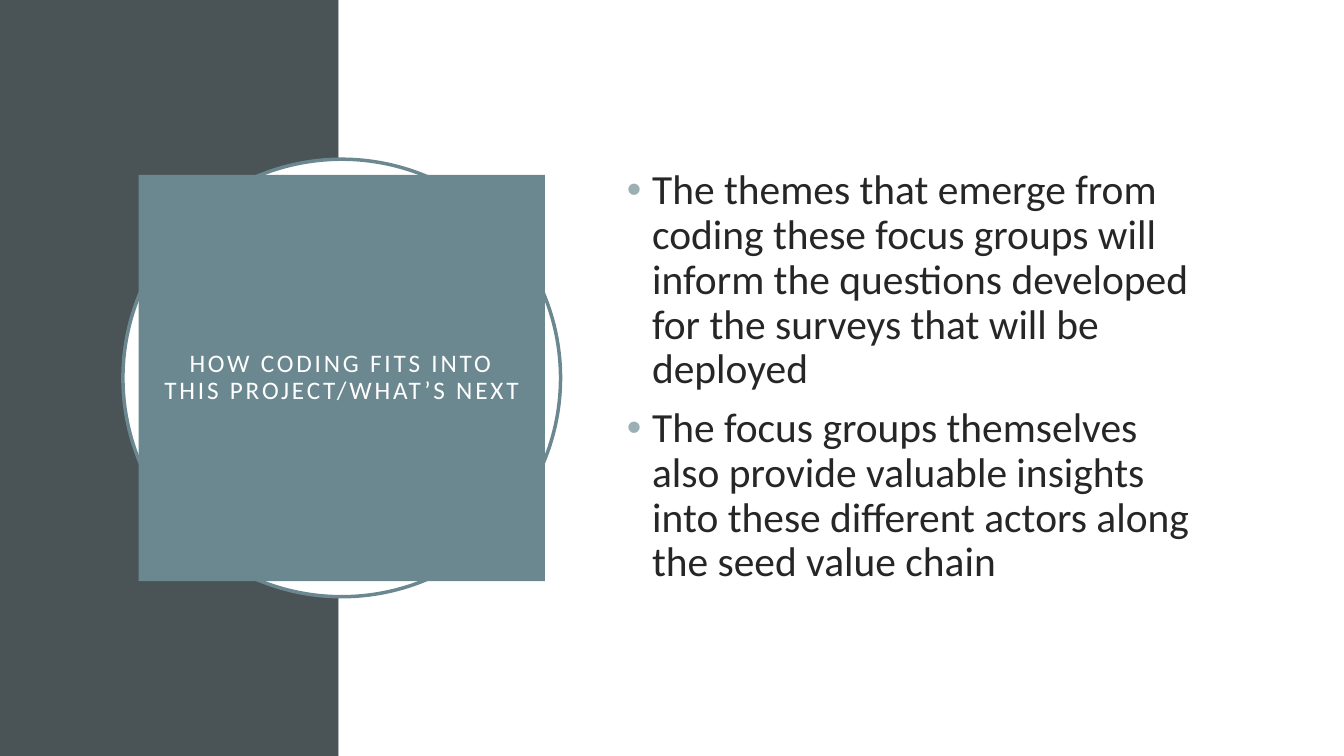
from dataclasses import dataclass

from lxml.etree import SubElement
from pptx import Presentation
from pptx.dml.color import RGBColor
from pptx.enum.shapes import MSO_SHAPE as Preset
from pptx.enum.text import MSO_ANCHOR as Anchor, PP_ALIGN as Align
from pptx.oxml.ns import qn
from pptx.util import Inches, Pt

WIDTH, HEIGHT = Inches(13.33), Inches(7.5)
SIDEBAR = 25.2
BADGE_CENTRE = 25.43
TITLE = "HOW CODING FITS INTO THIS PROJECT/WHAT’S NEXT"
POINTS = (
    "The themes that emerge from coding these focus groups will inform "
    "the questions developed for the surveys that will be deployed",
    "The focus groups themselves also provide valuable insights into "
    "these different actors along the seed value chain",
)


@dataclass(frozen=True)
class Theme:
    """Colours, font and type sizes of the slide."""
    dark: str = "4A5356"
    accent: str = "6B8891"
    bullet: str = "9BAFB5"
    ink: str = "262626"
    paper: str = "FFFFFF"
    font: str = "Calibri"
    title_size: float = 18
    body_size: float = 29.6


THEME = Theme()


def area(left, top, width, height):
    """Turn percentages of the slide into a left, top, width, height box."""
    return (int(WIDTH * left / 100), int(HEIGHT * top / 100),
            int(WIDTH * width / 100), int(HEIGHT * height / 100))


def centred_square(side):
    """Give a square around the badge centre, its side a percentage of the height."""
    width = side * HEIGHT / WIDTH
    return area(BADGE_CENTRE - width / 2, 50 - side / 2, width, side)


def add_block(slide, preset, box, fill, line=None):
    """Draw a flat preset shape with an optional outline colour."""
    shape = slide.shapes.add_shape(preset, *box)
    shape.shadow.inherit = False
    shape.fill.solid()
    shape.fill.fore_color.rgb = RGBColor.from_string(fill)
    if line:
        shape.line.color.rgb = RGBColor.from_string(line)
        shape.line.width = Pt(2.5)
    else:
        shape.line.fill.background()
    return shape


def add_bullet(paragraph, colour, indent=0.25):
    """Give a paragraph a coloured bullet with a hanging indent."""
    properties = paragraph._p.get_or_add_pPr()
    properties.set("marL", str(Inches(indent)))
    properties.set("indent", str(-Inches(indent)))
    bullet_colour = SubElement(properties, qn("a:buClr"))
    SubElement(bullet_colour, qn("a:srgbClr"), val=colour)
    SubElement(properties, qn("a:buFont"), typeface="Arial")
    SubElement(properties, qn("a:buChar"), char="•")


def write_text(frame, lines, *, size, colour, align=Align.LEFT, before=0,
               tracking=0, bullet=None, inset=None):
    """Fill a text frame with formatted paragraphs, centred vertically."""
    frame.word_wrap = True
    frame.vertical_anchor = Anchor.MIDDLE
    if inset is not None:
        frame.margin_left = frame.margin_right = Inches(inset)
        frame.margin_top = frame.margin_bottom = Inches(inset)
    for index, line in enumerate(lines):
        paragraph = frame.add_paragraph() if index else frame.paragraphs[0]
        paragraph.alignment = align
        paragraph.line_spacing = 0.9
        paragraph.space_before = Pt(before)
        if bullet:
            add_bullet(paragraph, bullet)
        run = paragraph.add_run()
        run.text = line
        run.font.name = THEME.font
        run.font.size = Pt(size)
        run.font.color.rgb = RGBColor.from_string(colour)
        if tracking:
            run.font._element.set("spc", str(tracking * 100))


def main():
    """Build and save the slide."""
    presentation = Presentation()
    presentation.slide_width, presentation.slide_height = WIDTH, HEIGHT
    slide = presentation.slides.add_slide(presentation.slide_layouts[6])

    add_block(slide, Preset.RECTANGLE, area(0, 0, SIDEBAR, 100), THEME.dark)
    add_block(slide, Preset.RECTANGLE, area(SIDEBAR, 0, 100 - SIDEBAR, 100), THEME.paper)
    add_block(slide, Preset.OVAL, centred_square(57.87), THEME.paper, THEME.accent)

    badge = add_block(slide, Preset.RECTANGLE, centred_square(53.73), THEME.accent)
    write_text(badge.text_frame, [TITLE], size=THEME.title_size, colour=THEME.paper,
               align=Align.CENTER, tracking=2, inset=0.2)

    body = slide.shapes.add_textbox(*area(45.91, 20.4, 43.66, 59.07))
    write_text(body.text_frame, POINTS, size=THEME.body_size, colour=THEME.ink,
               before=10, bullet=THEME.bullet)

    presentation.save("out.pptx")


if __name__ == "__main__":
    main()
